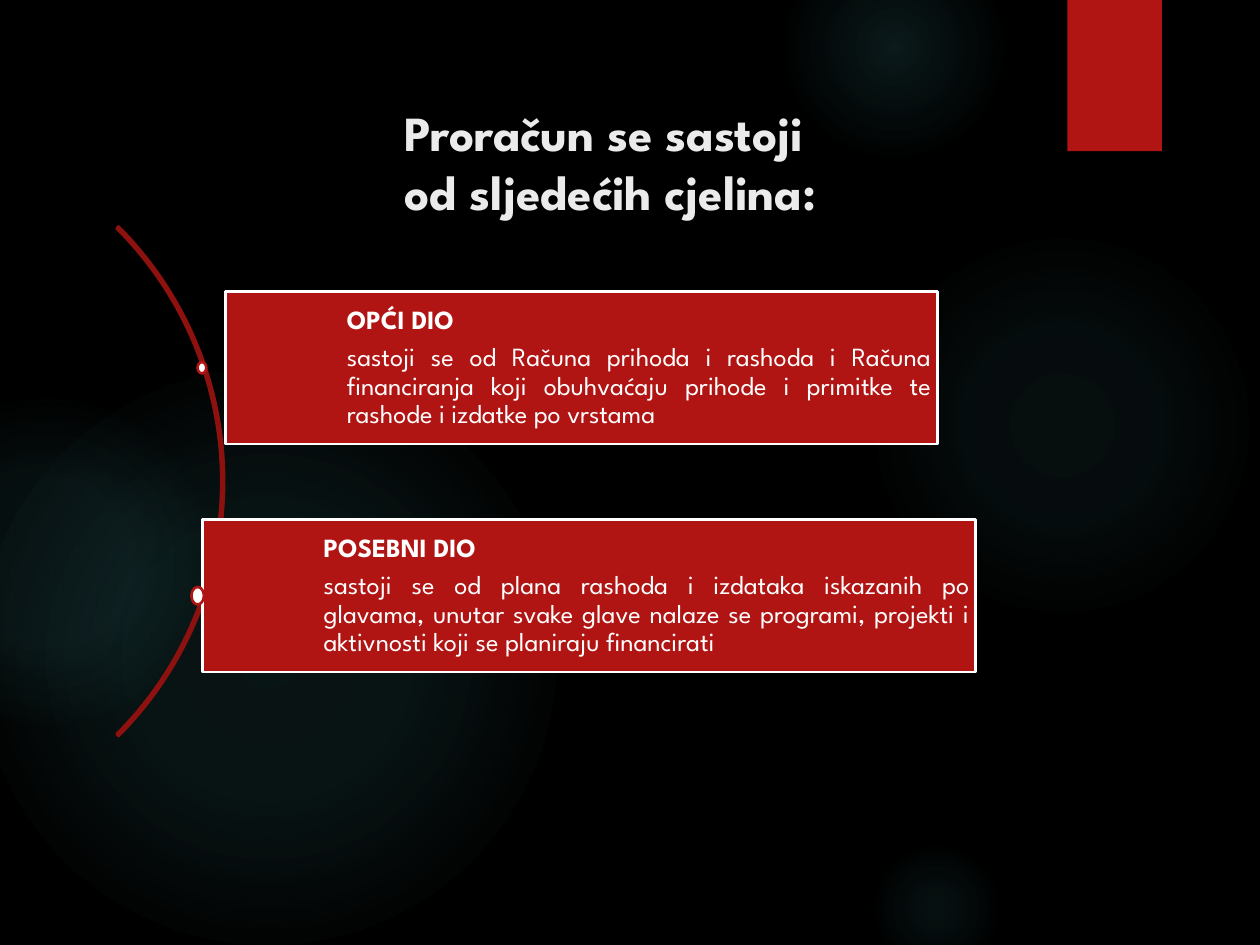
from lxml.etree import SubElement
from pptx import Presentation
from pptx.dml.color import RGBColor
from pptx.enum.shapes import MSO_SHAPE
from pptx.enum.text import MSO_ANCHOR, PP_ALIGN
from pptx.oxml.ns import qn
from pptx.util import Pt

FONT = "League Spartan"
RED, DARK_RED, WHITE, GLOW = "B01513", "8D110F", "FFFFFF", "50B9C1"
TITLE = "Proračun se sastoji \vod sljedećih cjelina:"

GLOWS = [
    (496, 132, 222, [(0, 7), (36, 6), (69, 0)]),
    (448, -36, 126, [(0, 14), (36, 7), (73, 0)]),
    (496, 480, 78, [(0, 9), (36, 5), (66, 0)]),
    (-12, 210, 330, [(0, 11), (36, 10), (75, 0)]),
    (-66, 228, 186, [(0, 8), (36, 8), (72, 0)]),
]
PARTS = [
    {
        "heading": "OPĆI DIO ",
        "body": "sastoji se od Računa prihoda i rashoda i Računa financiranja "
                "koji obuhvaćaju prihode i primitke te rashode i izdatke po vrstama",
        "left": 128.9, "width": 406.8, "dot": (115.4, 5, 6.5),
    },
    {
        "heading": "POSEBNI DIO ",
        "body": "sastoji se od plana rashoda i izdataka iskazanih po glavama, "
                "unutar svake glave nalaze se programi, projekti i aktivnosti "
                "koji se planiraju financirati",
        "left": 115.6, "width": 442, "dot": (113, 7.2, 10.1),
    },
]
PART_TOP, PART_HEIGHT, PART_PITCH = 166.6, 87.1, 130.3


def color(value):
    return RGBColor.from_string(value)


def add_shape(slide, kind, box, fill=None, line=None):
    shape = slide.shapes.add_shape(kind, *map(Pt, box))
    shape.shadow.inherit = False
    if fill:
        shape.fill.solid()
        shape.fill.fore_color.rgb = color(fill)
    else:
        shape.fill.background()
    if line:
        shape.line.color.rgb = color(line)
        shape.line.width = Pt(1.5)
    else:
        shape.line.fill.background()
    return shape


def add_glow(slide, left, top, size, stops):
    glow = add_shape(slide, MSO_SHAPE.OVAL, (left, top, size, size))
    glow.fill.gradient()
    gradient = glow.element.spPr.find(qn("a:gradFill"))
    for child in list(gradient):
        gradient.remove(child)
    stop_list = SubElement(gradient, qn("a:gsLst"))
    for position, opacity in stops:
        stop = SubElement(stop_list, qn("a:gs"), pos=str(position * 1000))
        tint = SubElement(stop, qn("a:srgbClr"), val=GLOW)
        SubElement(tint, qn("a:alpha"), val=str(opacity * 1000))
    radial = SubElement(gradient, qn("a:path"), path="circle")
    SubElement(radial, qn("a:fillToRect"), l="50000", t="50000", r="50000", b="50000")


def format_runs(paragraph, size, value, bold):
    for run in paragraph.runs:
        run.font.name = FONT
        run.font.size = Pt(size)
        run.font.bold = bold
        run.font.color.rgb = color(value)


def add_title(slide):
    frame = slide.shapes.add_textbox(Pt(90.7), Pt(54.2), Pt(516.2), Pt(75.6)).text_frame
    frame.word_wrap = True
    frame.vertical_anchor = MSO_ANCHOR.MIDDLE
    heading = frame.paragraphs[0]
    heading.text = TITLE
    heading.alignment = PP_ALIGN.CENTER
    format_runs(heading, 28, "EBEBEB", True)


def add_part(slide, part, top):
    panel = add_shape(slide, MSO_SHAPE.RECTANGLE,
                      (part["left"], top, part["width"], PART_HEIGHT), RED, WHITE)
    frame = panel.text_frame
    frame.word_wrap = True
    frame.vertical_anchor = MSO_ANCHOR.MIDDLE
    frame.margin_left = Pt(69.3)
    frame.margin_right = Pt(3.4)
    frame.margin_top = frame.margin_bottom = Pt(3)
    frame.text = part["heading"] + "\n" + part["body"]
    for paragraph, bold in zip(frame.paragraphs, (True, False)):
        paragraph.alignment = PP_ALIGN.JUSTIFY
        paragraph.line_spacing = 0.9
        paragraph.space_after = Pt(5.25)
        format_runs(paragraph, 15, WHITE, bold)

    center, width, height = part["dot"]
    middle = top + PART_HEIGHT / 2
    add_shape(slide, MSO_SHAPE.OVAL,
              (center - width / 2, middle - height / 2, width, height), WHITE, RED)


def main():
    presentation = Presentation()
    presentation.slide_width, presentation.slide_height = Pt(720), Pt(540)
    slide = presentation.slides.add_slide(presentation.slide_layouts[6])
    slide.background.fill.solid()
    slide.background.fill.fore_color.rgb = color("000000")

    for glow in GLOWS:
        add_glow(slide, *glow)
    add_shape(slide, MSO_SHAPE.RECTANGLE, (610, 0, 54, 86.4), RED)
    add_title(slide)

    arc = add_shape(slide, MSO_SHAPE.BLOCK_ARC, (-283.7, 69.1, 411.8, 411.8), line=DARK_RED)
    for index, value in enumerate((189, 27, 0.004)):
        arc.adjustments[index] = value
    for index, part in enumerate(PARTS):
        add_part(slide, part, PART_TOP + index * PART_PITCH)

    presentation.save("out.pptx")


if __name__ == "__main__":
    main()
